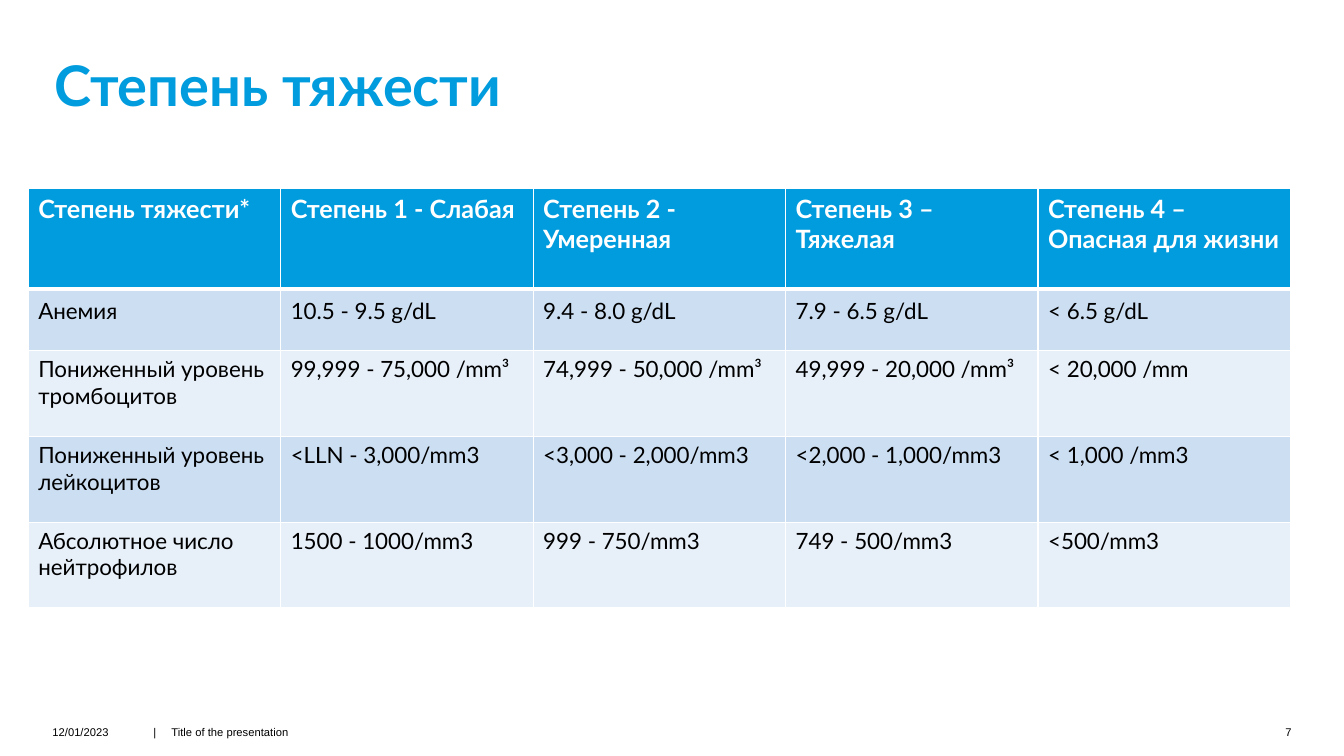
from lxml import etree
from pptx import Presentation
from pptx.dml.color import RGBColor
from pptx.enum.text import MSO_ANCHOR, MSO_AUTO_SIZE, PP_ALIGN
from pptx.oxml.ns import qn
from pptx.util import Inches, Pt

LEFT, RIGHT = PP_ALIGN.LEFT, PP_ALIGN.RIGHT
BOTTOM = MSO_ANCHOR.BOTTOM
NO_FIT = MSO_AUTO_SIZE.NONE
BLUE, WHITE, BLACK = "009CDE", "FFFFFF", "000000"
BANDS = ["CCDEF2", "E7EFF9"]


def color(value):
    return RGBColor.from_string(value)


def write(frame, text, size, font="Lato", ink=BLACK, bold=False,
          align=LEFT, line=None, after=None, tab=None):
    """Fill the frame with one formatted paragraph; tab is a stop in inches."""
    frame.word_wrap = True
    para = frame.paragraphs[0]
    para.alignment = align
    if line:
        para.line_spacing = line
    if after:
        para.space_after = Pt(after)
    if tab:
        stops = etree.SubElement(para._p.get_or_add_pPr(), qn("a:tabLst"))
        etree.SubElement(stops, qn("a:tab"), pos=str(Inches(tab)), algn="l")
    run = para.add_run()
    run.text = text
    run.font.name, run.font.size, run.font.bold = font, Pt(size), bold
    run.font.color.rgb = color(ink)


deck = Presentation()
deck.slide_width, deck.slide_height = Inches(13.33), Inches(7.5)
slide = deck.slides.add_slide(deck.slide_layouts[5])

# Title
title = slide.shapes.title
title.left, title.top = Inches(0.52), Inches(0.39)
title.width, title.height = Inches(8.92), Inches(0.79)
frame = title.text_frame
frame.auto_size = NO_FIT
frame.vertical_anchor = BOTTOM
frame.margin_left, frame.margin_right = Inches(0.02), Inches(0.39)
frame.margin_top = frame.margin_bottom = 0
write(frame, "Степень тяжести", 40, ink=BLUE, bold=True, line=0.9)

# Severity table
rows = [
    ["Степень тяжести*", "Степень 1 - Слабая", "Степень 2 - Умеренная",
     "Степень 3 – Тяжелая", "Степень 4 – Опасная для жизни"],
    ["Анемия", "10.5 - 9.5 g/dL", "9.4 - 8.0 g/dL", "7.9 - 6.5 g/dL",
     "< 6.5 g/dL"],
    ["Пониженный уровень тромбоцитов", "99,999 - 75,000 /mm³",
     "74,999 - 50,000 /mm³", "49,999 - 20,000 /mm³", "< 20,000 /mm"],
    ["Пониженный уровень лейкоцитов", "<LLN - 3,000/mm3",
     "<3,000 - 2,000/mm3", "<2,000 - 1,000/mm3", "< 1,000 /mm3"],
    ["Абсолютное число нейтрофилов", "1500 - 1000/mm3", "999 - 750/mm3",
     "749 - 500/mm3", "<500/mm3"],
]
heights = [1, 0.61, 0.85, 0.85, 0.85]
table = slide.shapes.add_table(
    len(rows), len(rows[0]), Inches(0.28), Inches(1.87),
    Inches(12.52), Inches(sum(heights))).table

for r, (row, height) in enumerate(zip(rows, heights)):
    table.rows[r].height = Inches(height)
    head = r == 0
    for c, text in enumerate(row):
        cell = table.cell(r, c)
        props = cell._tc.get_or_add_tcPr()
        for side in "LRTB":
            thick = (head and side == "B") or (r == 1 and side == "T")
            edge = etree.SubElement(props, qn("a:ln" + side),
                                    w=str(Pt(3 if thick else 1)))
            fill = etree.SubElement(edge, qn("a:solidFill"))
            etree.SubElement(fill, qn("a:srgbClr"), val=WHITE)
        cell.fill.solid()
        cell.fill.fore_color.rgb = color(BLUE if head else BANDS[(r - 1) % 2])
        if head:
            write(cell.text_frame, text, 18, ink=WHITE, bold=True)
        elif r == 1:
            write(cell.text_frame, text, 16, line=1.1, after=6)
        else:
            write(cell.text_frame, text, 16)

# Footer
for left, width, text, align, tab in [
    (0.52, 0.86, "12/01/2023", LEFT, None),
    (1.52, 2.48, "|\tTitle of the presentation", LEFT, 0.18),
    (12.49, 0.32, "7", RIGHT, None),
]:
    box = slide.shapes.add_textbox(Inches(left), Inches(7.2),
                                   Inches(width), Inches(0.2))
    frame = box.text_frame
    frame.margin_left = frame.margin_right = 0
    frame.margin_top = frame.margin_bottom = 0
    write(frame, text, 8, font="Arial", align=align, tab=tab)

deck.save("out.pptx")
